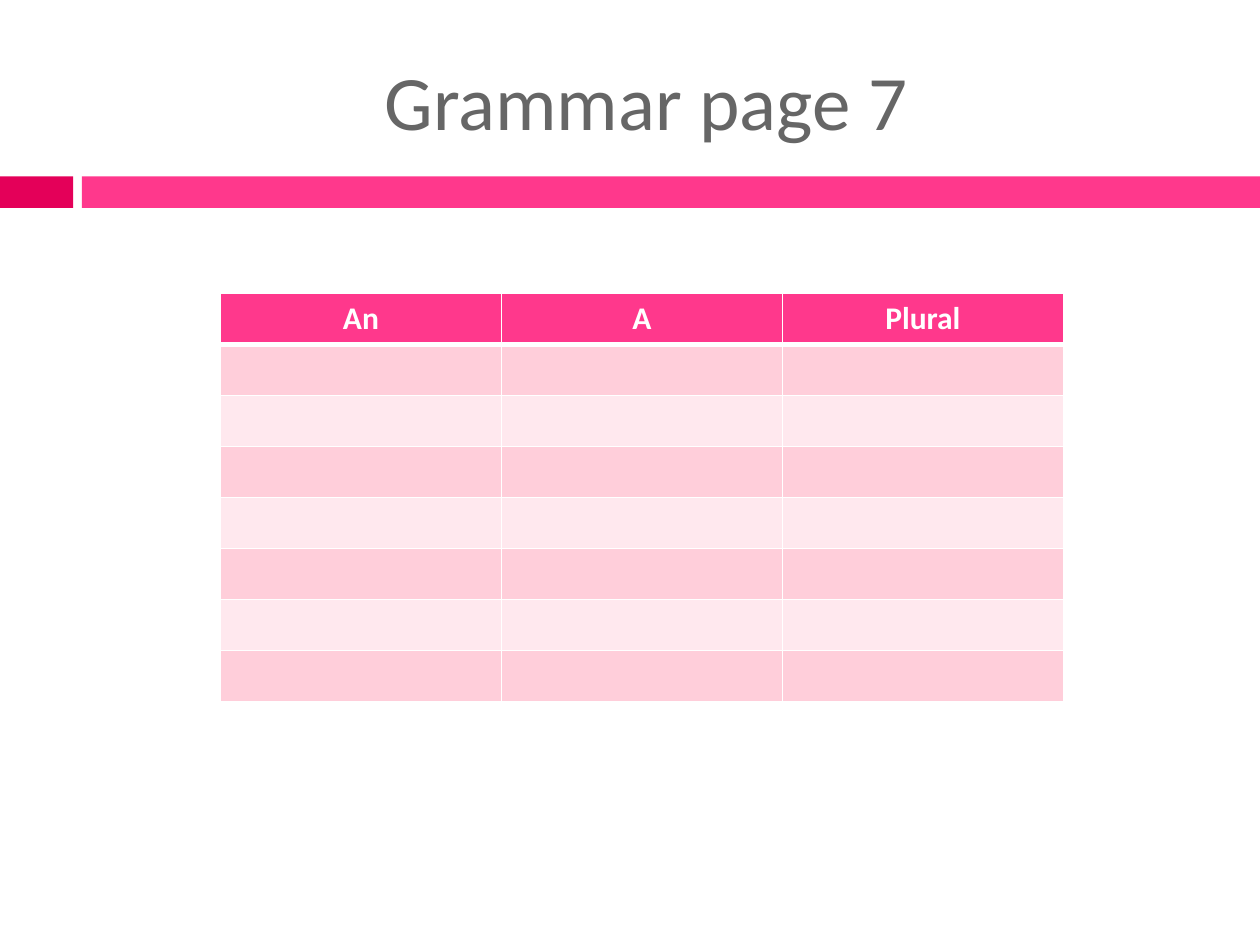
from lxml.etree import SubElement
from pptx import Presentation
from pptx.dml.color import RGBColor
from pptx.enum.shapes import MSO_SHAPE
from pptx.enum.text import MSO_ANCHOR, PP_ALIGN
from pptx.oxml.ns import qn
from pptx.util import Inches, Pt

FONT = "Calibri"
PINK, DARK_PINK, WHITE, GREY = "FF388C", "E40059", "FFFFFF", "666666"
BANDS = ("FFCEDA", "FFE8EE")
HEADINGS = ("An", "A", "Plural")
ROW_COUNT = 8
COLUMN_WIDTH, ROW_HEIGHT = 2.23, 0.405


def paint(fill, color):
    fill.solid()
    fill.fore_color.rgb = RGBColor.from_string(color)


def write(text_frame, text, size, color, bold=False):
    """Set one centred paragraph."""
    paragraph = text_frame.paragraphs[0]
    paragraph.text = text
    paragraph.alignment = PP_ALIGN.CENTER
    font = paragraph.font
    font.name, font.size, font.bold = FONT, Pt(size), bold
    font.color.rgb = RGBColor.from_string(color)


def add_bar(slide, left, width, color):
    bar = slide.shapes.add_shape(
        MSO_SHAPE.RECTANGLE, Inches(left), Inches(1.4), Inches(width), Inches(0.25))
    bar.shadow.inherit = False
    paint(bar.fill, color)
    bar.line.fill.background()


def add_title(slide, text):
    title = slide.shapes.add_textbox(
        Inches(0.67), Inches(0.25), Inches(8.92), Inches(1.08))
    title.text_frame.word_wrap = True
    title.text_frame.vertical_anchor = MSO_ANCHOR.MIDDLE
    write(title.text_frame, text, 44, GREY)


def set_borders(cell, top=1, bottom=1):
    """Draw white borders; call before filling, as the XML order requires."""
    properties = cell._tc.get_or_add_tcPr()
    for side, width in (("L", 1), ("R", 1), ("T", top), ("B", bottom)):
        line = SubElement(properties, qn(f"a:ln{side}"), w=str(Pt(width)))
        solid = SubElement(line, qn("a:solidFill"))
        SubElement(solid, qn("a:srgbClr"), val=WHITE)


def add_grammar_table(slide):
    table = slide.shapes.add_table(
        ROW_COUNT, len(HEADINGS), Inches(1.75), Inches(2.33),
        Inches(COLUMN_WIDTH * len(HEADINGS)), Inches(ROW_HEIGHT * ROW_COUNT)).table
    for column in table.columns:
        column.width = Inches(COLUMN_WIDTH)
    for index, row in enumerate(table.rows):
        row.height = Inches(ROW_HEIGHT)
        for heading, cell in zip(HEADINGS, row.cells):
            if index == 0:
                set_borders(cell, bottom=3)
                paint(cell.fill, PINK)
                write(cell.text_frame, heading, 18, WHITE, bold=True)
            else:
                set_borders(cell, top=3 if index == 1 else 1)
                paint(cell.fill, BANDS[(index - 1) % 2])


def main():
    presentation = Presentation()
    presentation.slide_width, presentation.slide_height = Inches(10), Inches(7.5)
    slide = presentation.slides.add_slide(presentation.slide_layouts[6])
    paint(slide.background.fill, WHITE)
    add_bar(slide, 0, 0.58, DARK_PINK)
    add_bar(slide, 0.65, 9.35, PINK)
    add_title(slide, "Grammar page 7")
    add_grammar_table(slide)
    presentation.save("out.pptx")


if __name__ == "__main__":
    main()
